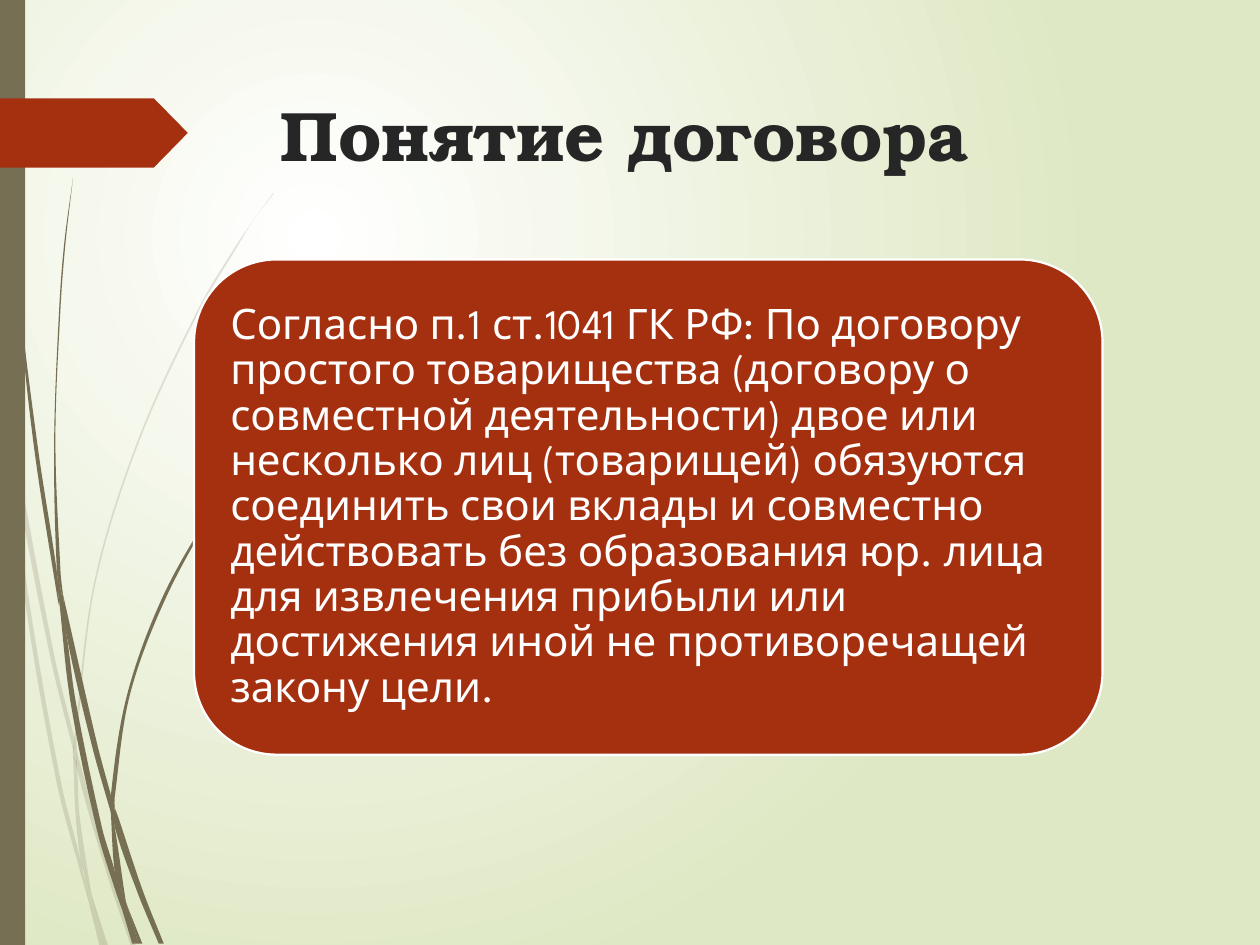
"""Build the slide that defines the partnership contract."""
import math
from dataclasses import dataclass

import pptx
import pptx.dml.color
import pptx.enum.shapes
import pptx.enum.text
import pptx.oxml
import pptx.oxml.ns
import pptx.util

Inches = pptx.util.Inches
qn = pptx.oxml.ns.qn
SHAPE = pptx.enum.shapes.MSO_SHAPE
ANCHOR = pptx.enum.text.MSO_ANCHOR
ALIGN = pptx.enum.text.PP_ALIGN
Point = tuple[float, float]


@dataclass(frozen=True)
class Theme:
    bark: str = "766F54"
    rust: str = "A53010"
    ink: str = "262626"
    white: str = "FFFFFF"
    leaf: str = "DFE8C4"
    title_font: str = "TeX Gyre Bonum"
    body_font: str = "League Spartan"
    title_size: int = 40
    body_size: int = 24
    faint: int = 20


@dataclass(frozen=True)
class Blade:
    left: list[Point]
    right: list[Point]


@dataclass(frozen=True)
class Block:
    kind: int
    box: tuple[float, float, float, float]
    color: str


THEME = Theme()
TITLE = "Понятие договора"
BODY = (
    "Согласно п.1 ст.1041 ГК РФ: По договору простого товарищества "
    "(договору о совместной деятельности) двое или несколько лиц (товарищей) "
    "обязуются соединить свои вклады и совместно действовать без образования "
    "юр. лица для извлечения прибыли или достижения иной не противоречащей "
    "закону цели."
)
FAINT_BLADES = [
    Blade([(0, 2.99), (0.07, 3.44), (0.08, 3.5)], [(0, 2.82), (0.06, 3.22), (0.08, 3.5)]),
    Blade([(0.1, 3.45), (0.12, 3.76), (0.4, 5.22), (0.59, 5.99)],
          [(0.1, 3.45), (0.43, 5.2), (0.59, 5.86)]),
    Blade([(0.61, 5.96), (0.61, 6.1), (0.85, 6.94), (1.04, 7.51)],
          [(0.61, 5.96), (0.64, 6.07), (0.88, 6.92), (1.08, 7.51)]),
    Blade([(0.73, 7.11), (0.83, 7.51)], [(0.73, 7.11), (0.86, 7.51)]),
    Blade([(0.08, 3.5), (0.19, 4.7), (0.45, 6.21), (0.64, 6.93), (0.7, 7.14)],
          [(0.08, 3.5), (0.12, 3.76), (0.22, 4.69), (0.48, 6.19), (0.64, 6.83),
           (0.69, 7.07), (0.7, 7.14)]),
    Blade([(0.58, 5.99), (0.6, 6.46), (0.64, 6.83), (0.67, 6.92), (0.73, 7.11)],
          [(0.58, 5.99), (0.61, 6.08), (0.63, 6.46), (0.72, 7.06), (0.73, 7.11)]),
    Blade([(2.17, 1.53), (2.01, 1.75), (1.86, 1.97), (1.58, 2.44), (1.1, 3.48),
           (0.75, 4.61), (0.59, 5.84), (0.59, 5.86), (0.61, 5.96)],
          [(2.17, 1.54), (2.01, 1.75), (1.87, 1.98), (1.59, 2.45), (1.11, 3.49),
           (0.76, 4.62), (0.61, 5.84), (0.61, 5.96)]),
    Blade([(0.7, 7.14), (0.79, 7.51)], [(0.7, 7.14), (0.82, 7.51)]),
    Blade([(0.59, 5.86), (0.58, 5.99), (0.61, 6.08)],
          [(0.59, 5.86), (0.61, 5.96), (0.61, 6.1)]),
    Blade([(0.65, 6.83), (0.69, 7.07), (0.7, 7.14), (0.82, 7.51)],
          [(0.65, 6.83), (0.67, 6.92), (0.73, 7.11), (0.83, 7.51)]),
]
DARK_BLADES = [
    Blade([(0.02, 0), (0.02, 0.48), (0.05, 1.1), (0.14, 2.33), (0.27, 3.55),
           (0.46, 4.77), (0.47, 4.81)],
          [(0.03, 0), (0.04, 0.48), (0.06, 1.09), (0.15, 2.32), (0.3, 3.55),
           (0.45, 4.53), (0.47, 4.81)]),
    Blade([(0.5, 4.72), (0.53, 5.05), (0.73, 5.92), (0.88, 6.45)],
          [(0.5, 4.72), (0.77, 5.9), (0.88, 6.31)]),
    Blade([(0.91, 6.41), (0.91, 6.56), (1.09, 7.08), (1.26, 7.49)],
          [(0.91, 6.41), (0.94, 6.49), (1.13, 7.06), (1.3, 7.49)]),
    Blade([(0.47, 4.77), (0.56, 5.57), (0.77, 6.59), (0.92, 7.08), (0.97, 7.22)],
          [(0.47, 4.77), (0.53, 5.05), (0.6, 5.56), (0.81, 6.57), (0.91, 6.91),
           (0.97, 7.22)]),
    Blade([(0.58, 1.41), (0.51, 1.93), (0.47, 2.45), (0.43, 3.49), (0.45, 4.49),
           (0.49, 4.72)],
          [(0.58, 1.41), (0.52, 1.93), (0.48, 2.45), (0.44, 3.49), (0.48, 4.53),
           (0.5, 4.72)]),
    Blade([(1.01, 7.19), (1.1, 7.49)], [(1.01, 7.19), (1.13, 7.49)]),
    Blade([(0.45, 4.49), (0.47, 4.77), (0.53, 5.05)],
          [(0.45, 4.49), (0.49, 4.72), (0.5, 4.72), (0.53, 5.05)]),
    Blade([(2.15, 3.44), (2.03, 3.58), (1.91, 3.73), (1.68, 4.05), (1.29, 4.74),
           (1.01, 5.51), (0.88, 6.31), (0.91, 6.41)],
          [(2.16, 3.44), (2.03, 3.59), (1.91, 3.74), (1.69, 4.06), (1.31, 4.76),
           (1.03, 5.52), (0.91, 6.33), (0.91, 6.41)]),
    Blade([(0.97, 7.22), (1.05, 7.49)], [(0.97, 7.22), (1.08, 7.49)]),
    Blade([(0.88, 6.45), (0.91, 6.91), (0.96, 7.06), (1.01, 7.19)],
          [(0.88, 6.45), (0.91, 6.56), (1, 7.16), (1.01, 7.19)]),
    Blade([(0.88, 6.31), (0.88, 6.45), (0.91, 6.56)],
          [(0.88, 6.31), (0.91, 6.41), (0.91, 6.56)]),
    Blade([(0.91, 6.91), (0.97, 7.22), (1.08, 7.49)],
          [(0.91, 6.91), (0.96, 7.06), (1.01, 7.19), (1.1, 7.49)]),
]
SIDEBAR = Block(SHAPE.RECTANGLE, (0, 0, 0.2, 7.5), THEME.bark)
BANNER = Block(SHAPE.PENTAGON, (0, 0.78, 1.49, 0.55), THEME.rust)
PANEL = Block(SHAPE.ROUNDED_RECTANGLE, (1.54, 2.06, 7.21, 3.93), THEME.rust)


def rgb(color: str):
    """Return a colour object for a hex code."""
    return pptx.dml.color.RGBColor.from_string(color)


def xml(tag: str, attrs: str, inner: str = ""):
    """Return a drawing element."""
    ns = pptx.oxml.ns.nsdecls("a")
    return pptx.oxml.parse_xml(f"<a:{tag} {ns} {attrs}>{inner}</a:{tag}>")


def paint(sp, color: str) -> None:
    """Give a shape a flat fill without line or shadow."""
    sp.shadow.inherit = False
    sp.fill.solid()
    sp.fill.fore_color.rgb = rgb(color)
    sp.line.fill.background()


def handle(at: Point, before: Point, after: Point, reach: float) -> Point:
    """Return the control point that leaves a point along its tangent."""
    dx, dy = after[0] - before[0], after[1] - before[1]
    scale = reach / (3 * math.hypot(dx, dy) or 1)
    return at[0] + dx * scale, at[1] + dy * scale


def bend(sp, edges: list[range]) -> None:
    """Turn the straight segments along each edge into cubic curves."""
    nodes = [pt.getparent() for pt in sp._element.iter(qn("a:pt"))]
    pts = [(int(n[0].get("x")), int(n[0].get("y"))) for n in nodes]
    for edge in edges:
        for i in edge[:-1]:
            a, b = pts[i], pts[i + 1]
            before, after = pts[max(i - 1, edge[0])], pts[min(i + 2, edge[-1])]
            reach = math.dist(a, b)
            curve = (handle(a, before, b, reach), handle(b, after, a, reach), b)
            inner = "".join(f'<a:pt x="{x:.0f}" y="{y:.0f}"/>' for x, y in curve)
            nodes[i + 1].getparent().replace(nodes[i + 1], xml("cubicBezTo", "", inner))


def draw_blade(s, blade: Blade, opacity: int = 100) -> None:
    """Draw one piece of grass between its two edges."""
    outline = [(Inches(x), Inches(y)) for x, y in blade.left + blade.right[::-1]]
    builder = s.shapes.build_freeform(*outline[0])
    builder.add_line_segments(outline[1:], close=True)
    sp = builder.convert_to_shape()
    n = len(blade.left)
    bend(sp, [range(n), range(n, len(outline))])
    paint(sp, THEME.bark)
    if opacity < 100:
        clr = sp._element.spPr.find(qn("a:solidFill"))[0]
        clr.append(xml("alpha", f'val="{opacity * 1000}"'))


def draw_block(s, block: Block):
    """Draw a flat preset shape and return it."""
    sp = s.shapes.add_shape(block.kind, *map(Inches, block.box))
    paint(sp, block.color)
    return sp


def write(tf, text: str, font: str, size: int, color: str, bold: bool = False):
    """Write one left-aligned paragraph and return it."""
    tf.word_wrap = True
    p = tf.paragraphs[0]
    p.alignment = ALIGN.LEFT
    r = p.add_run()
    r.text = text
    r.font.name, r.font.size, r.font.bold = font, pptx.util.Pt(size), bold
    r.font.color.rgb = rgb(color)
    return p


def set_background(s) -> None:
    """Fill the background with a radial gradient."""
    fill = s.background.fill
    fill.gradient()
    for stop, color in zip(fill.gradient_stops, (THEME.white, THEME.leaf)):
        stop.color.rgb = rgb(color)
    grad = s._element.find(".//" + qn("a:gradFill"))
    focus = '<a:fillToRect l="50000" t="50000" r="100000" b="100000"/>'
    grad.replace(grad.find(qn("a:lin")), xml("path", 'path="circle"', focus))


def main() -> None:
    """Build and save the presentation."""
    prs = pptx.Presentation()
    prs.slide_width, prs.slide_height = Inches(10), Inches(7.5)
    s = prs.slides.add_slide(prs.slide_layouts[5])
    set_background(s)
    for blade in FAINT_BLADES:
        draw_blade(s, blade, THEME.faint)
    for blade in DARK_BLADES:
        draw_blade(s, blade)
    draw_block(s, SIDEBAR)
    draw_block(s, BANNER).adjustments[0] = 0.49

    title = s.shapes.title
    title.left, title.top, title.width, title.height = map(Inches, (2.13, 0.68, 7.21, 1.4))
    title.text_frame.vertical_anchor = ANCHOR.TOP
    write(title.text_frame, TITLE, THEME.title_font, THEME.title_size, THEME.ink, True)

    panel = draw_block(s, PANEL)
    panel.line.color.rgb = rgb(THEME.white)
    panel.line.width = pptx.util.Pt(1.25)
    tf = s.shapes.add_textbox(*map(Inches, (1.73, 2.25, 6.83, 3.55))).text_frame
    tf.vertical_anchor = ANCHOR.MIDDLE
    tf.margin_left = tf.margin_right = tf.margin_top = tf.margin_bottom = Inches(0.1)
    write(tf, BODY, THEME.body_font, THEME.body_size, THEME.white).line_spacing = 0.9
    prs.save("out.pptx")


if __name__ == "__main__":
    main()
